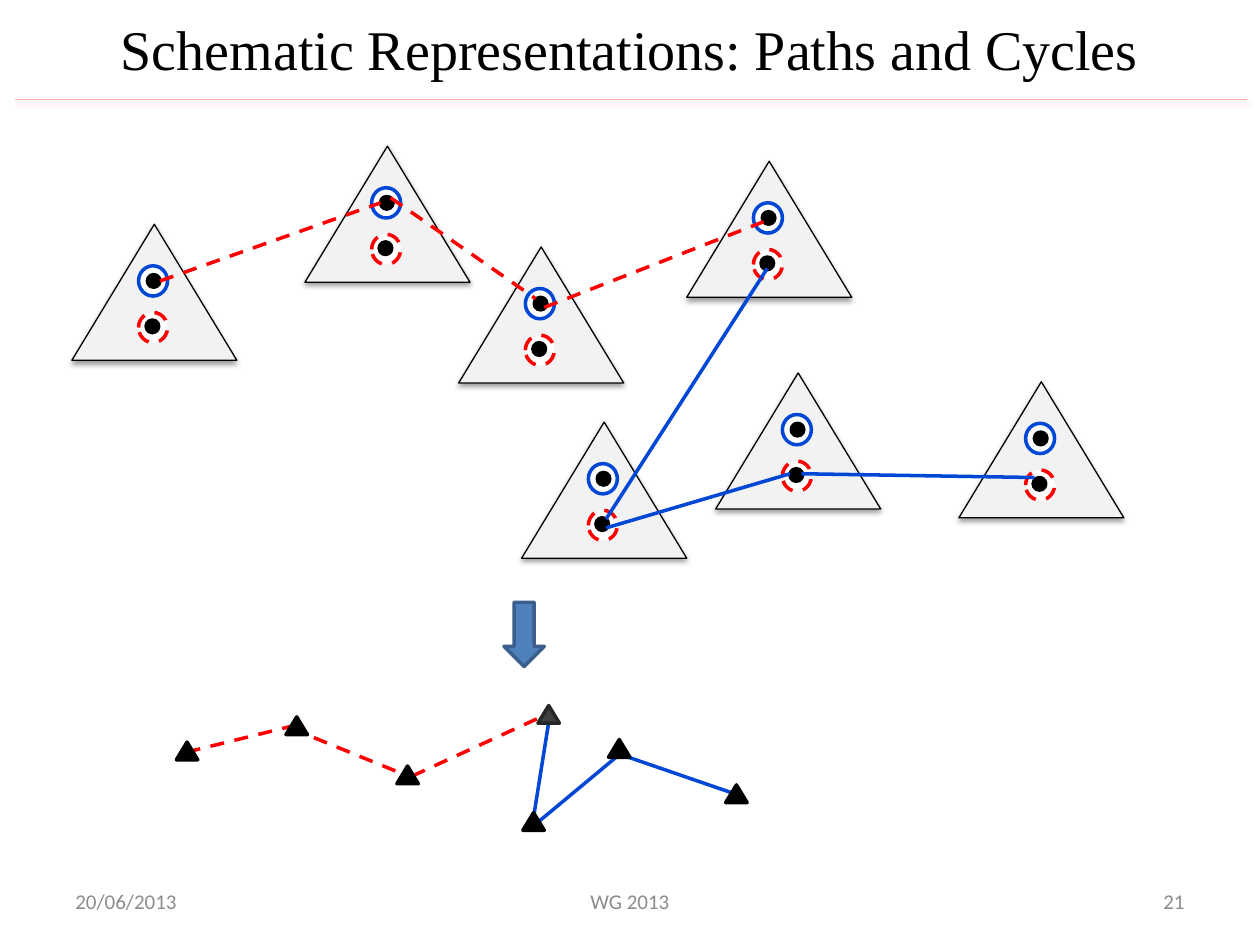
from lxml import etree
from pptx import Presentation
from pptx.dml.color import RGBColor
from pptx.enum import dml, shapes, text
from pptx.oxml import ns
from pptx.util import Inches, Pt

BLACK = RGBColor(0x00, 0x00, 0x00)
WHITE = RGBColor(0xFF, 0xFF, 0xFF)
GREY = RGBColor(0x8C, 0x8C, 0x8C)
PALE = RGBColor(0xF2, 0xF2, 0xF2)
DARK = RGBColor(0x40, 0x40, 0x40)
DARK_EDGE = RGBColor(0x26, 0x26, 0x26)
RED = RGBColor(0xFF, 0x00, 0x00)
BLUE = RGBColor(0x00, 0x47, 0xD6)
PINK = RGBColor(0xFF, 0xA7, 0xA7)
STEEL = RGBColor(0x4F, 0x81, 0xBD)
STEEL_EDGE = RGBColor(0x3A, 0x5F, 0x8C)

SHAPE = shapes.MSO_SHAPE
ALIGN = text.PP_ALIGN


def set_line(sp, color, width, dashed=False):
    sp.line.color.rgb = color
    sp.line.width = Pt(width)
    if dashed:
        sp.line.dash_style = dml.MSO_LINE.DASH


def set_effects(sp, shadow=None):
    effects = etree.SubElement(sp._element.spPr, ns.qn("a:effectLst"))
    if shadow is not None:
        outer = etree.SubElement(effects, ns.qn("a:outerShdw"), blurRad=str(Pt(3.1)),
                                 dist=str(Pt(1.6)), dir="5400000", rotWithShape="0")
        clr = etree.SubElement(outer, ns.qn("a:srgbClr"), val=str(shadow))
        etree.SubElement(clr, ns.qn("a:alpha"), val="38000")


def add_figure(slide, kind, box, fill, edge, width=2, dashed=False, shadow=None):
    sp = slide.shapes.add_shape(kind, *map(Inches, box))
    sp.fill.solid()
    sp.fill.fore_color.rgb = fill
    set_line(sp, edge, width, dashed)
    set_effects(sp, shadow)


def add_line(slide, start, end, color, width=2, dashed=False, shadow=None):
    line = slide.shapes.add_connector(shapes.MSO_CONNECTOR.STRAIGHT,
                                      *map(Inches, (*start, *end)))
    set_line(line, color, width, dashed)
    set_effects(line, shadow)


def add_label(slide, box, words, size, font, color, align, anchor=text.MSO_ANCHOR.TOP):
    tf = slide.shapes.add_textbox(*map(Inches, box)).text_frame
    tf.word_wrap = True
    tf.vertical_anchor = anchor
    p = tf.paragraphs[0]
    p.text = words
    p.alignment = align
    p.font.size = Pt(size)
    p.font.name = font
    p.font.color.rgb = color


def add_header(slide, left, top, width, height):
    add_label(slide, (left, top, width, height),
              "Schematic Representations: Paths and Cycles",
              32, "Times New Roman", BLACK, ALIGN.CENTER)
    rule = top + height + 0.08
    add_line(slide, (left + 0.12, rule), (left + width - 0.1, rule), PINK, 0.75, shadow=PINK)


def add_footer(slide, left, top, width, height):
    side, middle = 2.33, 3.17
    for x, w, words, align in (
        (left, side, "20/06/2013", ALIGN.LEFT),
        (left + (width - middle) / 2, middle, "WG 2013", ALIGN.CENTER),
        (left + width - side, side, "21", ALIGN.RIGHT),
    ):
        add_label(slide, (x, top, w, height), words, 12, "Calibri", GREY, align,
                  text.MSO_ANCHOR.MIDDLE)


def add_gadget(slide, left, top):
    add_figure(slide, SHAPE.ISOSCELES_TRIANGLE, (left, top, 1.31, 1.08), PALE, BLACK, 0.75,
               shadow=BLACK)
    for ring_y, dot_x, dot_y, color in ((0.33, 0.6, 0.4, BLUE), (0.7, 0.59, 0.76, RED)):
        add_figure(slide, SHAPE.OVAL, (left + 0.53, top + ring_y, 0.23, 0.24), WHITE, color,
                   dashed=color == RED)
        add_figure(slide, SHAPE.OVAL, (left + dot_x, top + dot_y, 0.1, 0.1), BLACK, BLACK)


def add_links(slide, red, blue):
    for links, color in ((red, RED), (blue, BLUE)):
        for start, end in links:
            add_line(slide, start, end, color, dashed=color == RED)


def add_detailed_path(slide):
    for left, top in ((0.57, 1.78), (2.42, 1.16), (3.64, 1.96), (5.45, 1.28),
                      (4.14, 3.35), (5.68, 2.96), (7.61, 3.03)):
        add_gadget(slide, left, top)
    add_links(
        slide,
        red=(((1.27, 2.23), (3.02, 1.61)), ((3.1, 1.57), (4.25, 2.37)),
             ((4.32, 2.44), (6.06, 1.76))),
        blue=(((6.09, 2.13), (4.81, 4.12)), ((6.27, 3.76), (4.81, 4.19)),
              ((8.21, 3.79), (6.36, 3.76))),
    )


def add_schematic_path(slide):
    add_links(
        slide,
        red=(((1.48, 5.97), (2.41, 5.74)), ((2.31, 5.78), (3.24, 6.16)),
             ((3.27, 6.16), (4.36, 5.66))),
        blue=(((4.36, 5.7), (4.22, 6.58)), ((4.95, 5.96), (4.24, 6.55)),
              ((5.86, 6.31), (4.93, 5.99))),
    )
    turn = (4.27, 5.6)
    for node in ((1.4, 5.89), (2.27, 5.69), (3.15, 6.08), turn,
                 (4.15, 6.45), (4.83, 5.87), (5.76, 6.23)):
        fill, edge = (DARK, DARK_EDGE) if node == turn else (BLACK, BLACK)
        add_figure(slide, SHAPE.ISOSCELES_TRIANGLE, (*node, 0.17, 0.14), fill, edge)


def main():
    prs = Presentation()
    prs.slide_width, prs.slide_height = Inches(10), Inches(7.5)
    slide = prs.slides.add_slide(prs.slide_layouts[6])
    add_footer(slide, 0.5, 6.95, 9, 0.4)
    add_header(slide, 0, 0.07, 10, 0.64)
    add_detailed_path(slide)
    add_schematic_path(slide)
    add_figure(slide, SHAPE.DOWN_ARROW, (4, 4.78, 0.32, 0.51), STEEL, STEEL_EDGE)
    prs.save("out.pptx")


if __name__ == "__main__":
    main()
